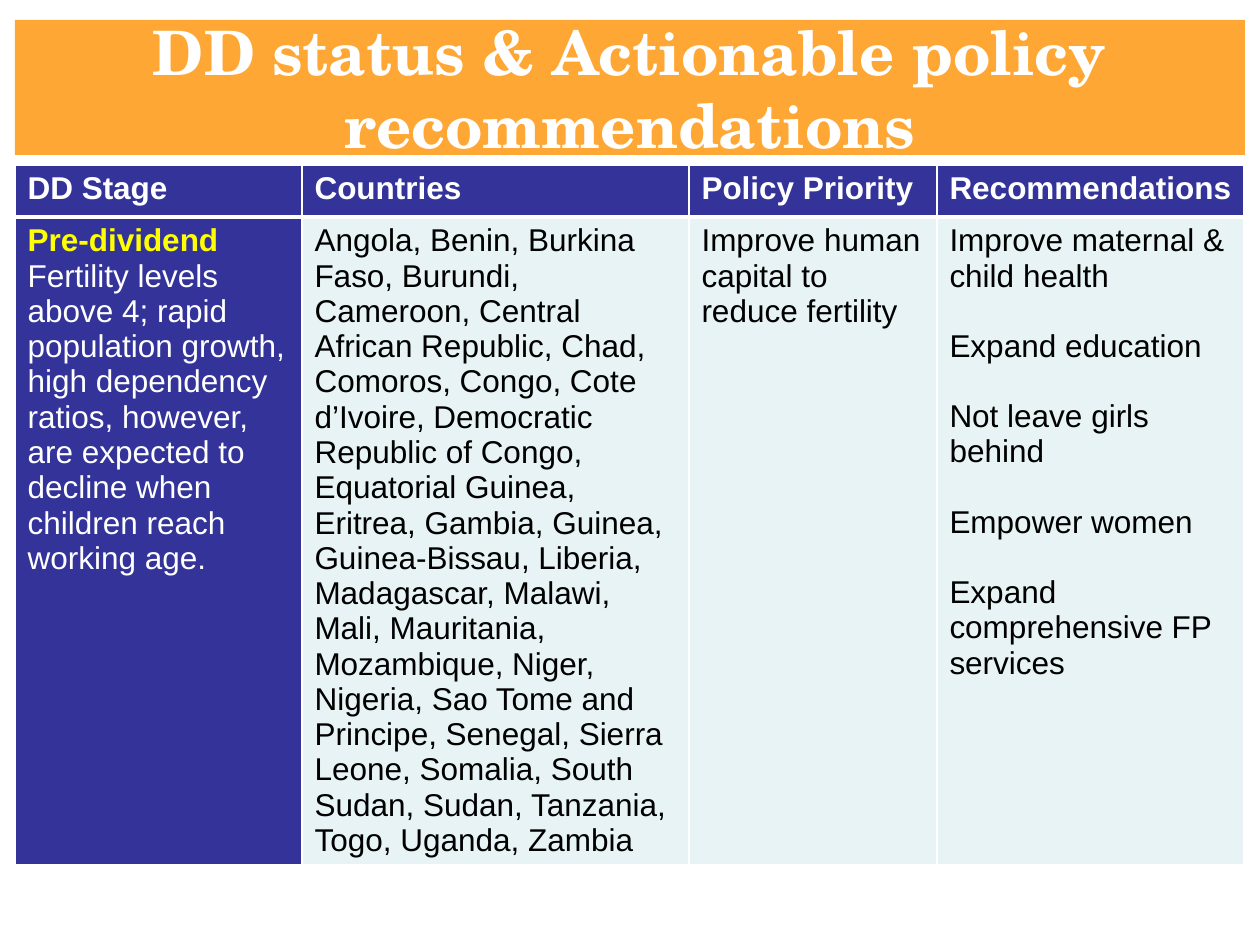
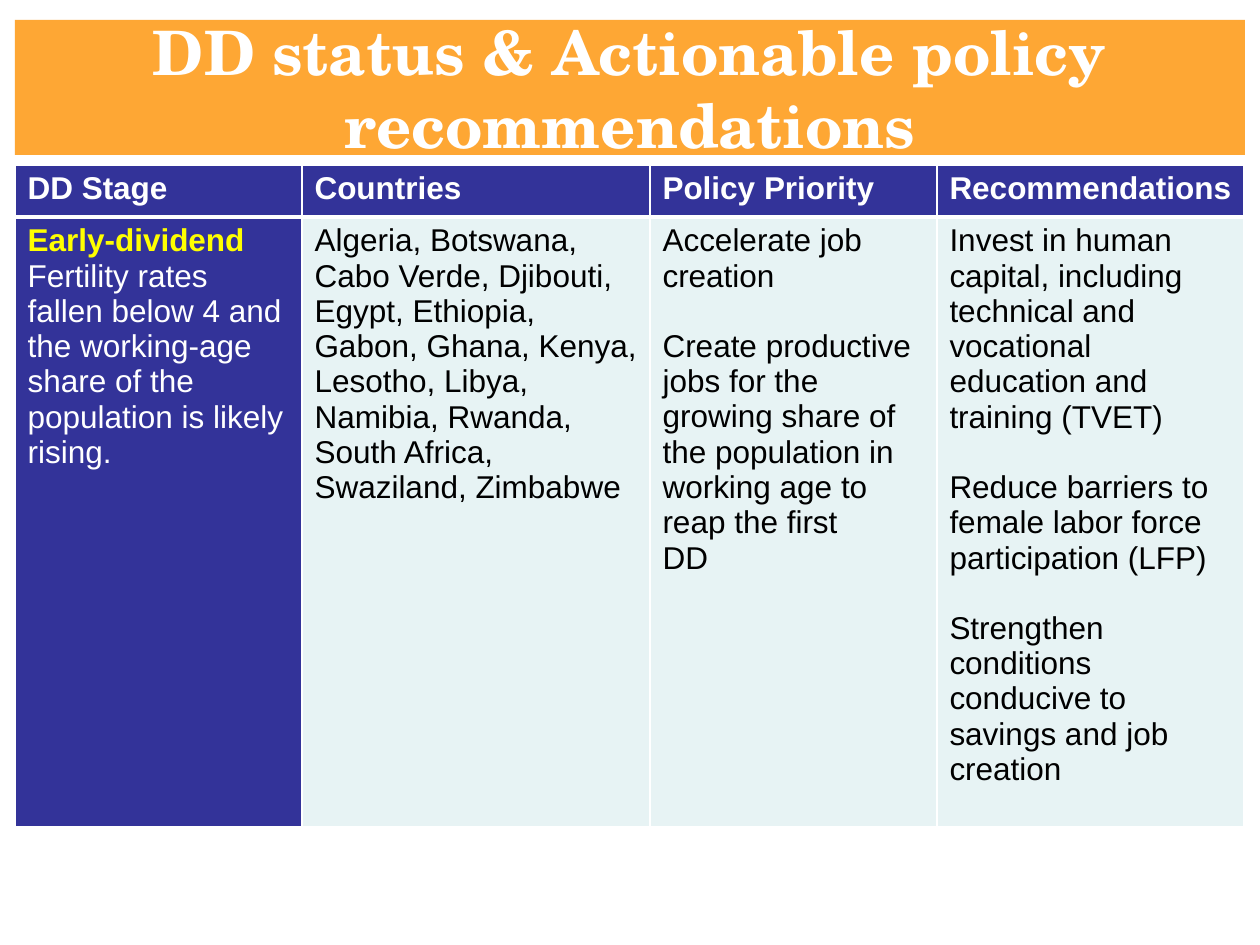
from lxml.etree import SubElement
from pptx import Presentation
from pptx.dml.color import RGBColor
from pptx.enum.shapes import MSO_SHAPE
from pptx.enum.text import MSO_ANCHOR, PP_ALIGN
from pptx.oxml.ns import qn
from pptx.util import Emu, Pt

PX_PER_INCH = 126
COLORS = {
    "band": "FEA734",
    "stage": "333399",
    "body": "E7F3F4",
    "stage_name": "FFFF00",
    "white": "FFFFFF",
    "black": "000000",
}
TITLE = "DD status & Actionable policy recommendations"
TITLE_FONT, TITLE_SIZE = "TeX Gyre Schola", 35
TABLE_FONT, TABLE_SIZE, BLOCK_GAP = "Arial", 18, 20
HEADINGS = ["DD Stage", "Countries", "Policy Priority", "Recommendations"]

# Priorities and recommendations are blocks of paragraphs with a gap between blocks.
STAGES = [
    {
        "name": "Pre-dividend",
        "description": "Fertility levels above 4; rapid population growth, high dependency "
                       "ratios, however, are expected to decline when children reach working age.",
        "countries": "Angola, Benin, Burkina Faso, Burundi, Cameroon, Central African Republic, "
                     "Chad, Comoros, Congo, Cote d’Ivoire, Democratic Republic of Congo, "
                     "Equatorial Guinea, Eritrea, Gambia, Guinea, Guinea-Bissau, Liberia, "
                     "Madagascar, Malawi, Mali, Mauritania, Mozambique, Niger, Nigeria, "
                     "Sao Tome and Principe, Senegal, Sierra Leone, Somalia, South Sudan, "
                     "Sudan, Tanzania, Togo, Uganda, Zambia",
        "priorities": [["Improve human capital to reduce fertility"]],
        "recommendations": [
            ["Improve maternal & child health"],
            ["Expand education"],
            ["Not leave girls behind"],
            ["Empower women"],
            ["Expand comprehensive FP services"],
        ],
        "column_widths": [287, 387, 248, 307],
        "body_height": 646,
    },
    {
        "name": "Early-dividend",
        "description": "Fertility rates fallen below 4 and the working-age share of the "
                       "population is likely rising.",
        "countries": "Algeria, Botswana, Cabo Verde, Djibouti, Egypt, Ethiopia, Gabon, Ghana, "
                     "Kenya, Lesotho, Libya, Namibia, Rwanda, South Africa, Swaziland, Zimbabwe",
        "priorities": [
            ["Accelerate job creation"],
            ["Create productive jobs for the growing share of the population in working age "
             "to reap the first", "DD"],
        ],
        "recommendations": [
            ["Invest in human capital, including technical and vocational education and "
             "training (TVET)"],
            ["Reduce barriers to female labor force participation (LFP)"],
            ["Strengthen conditions conducive to savings and job creation"],
        ],
        "column_widths": [287, 348, 287, 307],
        "body_height": 610,
    },
]

LEFT = 15
BAND_TOP, BAND_WIDTH, BAND_HEIGHT = 20, 1230, 135
TABLE_TOP, HEADING_HEIGHT = 165, 52


def px(length):
    return Emu(round(length * 914400 / PX_PER_INCH))


def rgb(color):
    return RGBColor.from_string(COLORS[color])


def add_run(paragraph, text, font, size, color, bold):
    run = paragraph.add_run()
    run.text = text
    run.font.name = font
    run.font.size = Pt(size)
    run.font.bold = bold
    run.font.color.rgb = rgb(color)


def add_title_band(slide):
    band = slide.shapes.add_shape(MSO_SHAPE.RECTANGLE, px(LEFT), px(BAND_TOP),
                                  px(BAND_WIDTH), px(BAND_HEIGHT))
    band.shadow.inherit = False
    band.fill.solid()
    band.fill.fore_color.rgb = rgb("band")
    band.line.fill.background()
    frame = band.text_frame
    frame.word_wrap = True
    frame.vertical_anchor = MSO_ANCHOR.MIDDLE
    paragraph = frame.paragraphs[0]
    paragraph.alignment = PP_ALIGN.CENTER
    add_run(paragraph, TITLE, TITLE_FONT, TITLE_SIZE, "white", True)


def set_borders(cell, top, bottom):
    """Draw white borders, with the top and bottom widths given in points."""
    properties = cell._tc.get_or_add_tcPr()
    for side, width in (("L", 1), ("R", 1), ("T", top), ("B", bottom)):
        border = SubElement(properties, qn(f"a:ln{side}"), w=str(Pt(width)))
        fill = SubElement(border, qn("a:solidFill"))
        SubElement(fill, qn("a:srgbClr"), val=COLORS["white"])


def fill_cell(cell, blocks, fill, borders):
    """Write blocks of (text, color, bold) paragraphs into a cell."""
    set_borders(cell, *borders)
    cell.fill.solid()
    cell.fill.fore_color.rgb = rgb(fill)
    frame = cell.text_frame
    for block_index, block in enumerate(blocks):
        for line_index, (text, color, bold) in enumerate(block):
            is_first = block_index == line_index == 0
            paragraph = frame.paragraphs[0] if is_first else frame.add_paragraph()
            if block_index and not line_index:
                paragraph.space_before = Pt(BLOCK_GAP)
            add_run(paragraph, text, TABLE_FONT, TABLE_SIZE, color, bold)


def plain(blocks):
    return [[(text, "black", False) for text in block] for block in blocks]


def add_stage_table(slide, stage):
    widths = stage["column_widths"]
    heights = [HEADING_HEIGHT, stage["body_height"]]
    table = slide.shapes.add_table(len(heights), len(widths), px(LEFT), px(TABLE_TOP),
                                   px(sum(widths)), px(sum(heights))).table
    for column, width in zip(table.columns, widths):
        column.width = px(width)
    for row, height in zip(table.rows, heights):
        row.height = px(height)

    body = [
        [[(stage["name"], "stage_name", True), (stage["description"], "white", False)]],
        plain([[stage["countries"]]]),
        plain(stage["priorities"]),
        plain(stage["recommendations"]),
    ]
    for index, (heading, blocks) in enumerate(zip(HEADINGS, body)):
        fill_cell(table.cell(0, index), [[(heading, "white", True)]], "stage", (1, 3))
        fill_cell(table.cell(1, index), blocks, "body" if index else "stage", (3, 1))


def main():
    deck = Presentation()
    deck.slide_width, deck.slide_height = px(1260), px(945)
    for stage in STAGES:
        slide = deck.slides.add_slide(deck.slide_layouts[6])
        add_title_band(slide)
        add_stage_table(slide, stage)
    deck.save("out.pptx")


if __name__ == "__main__":
    main()
